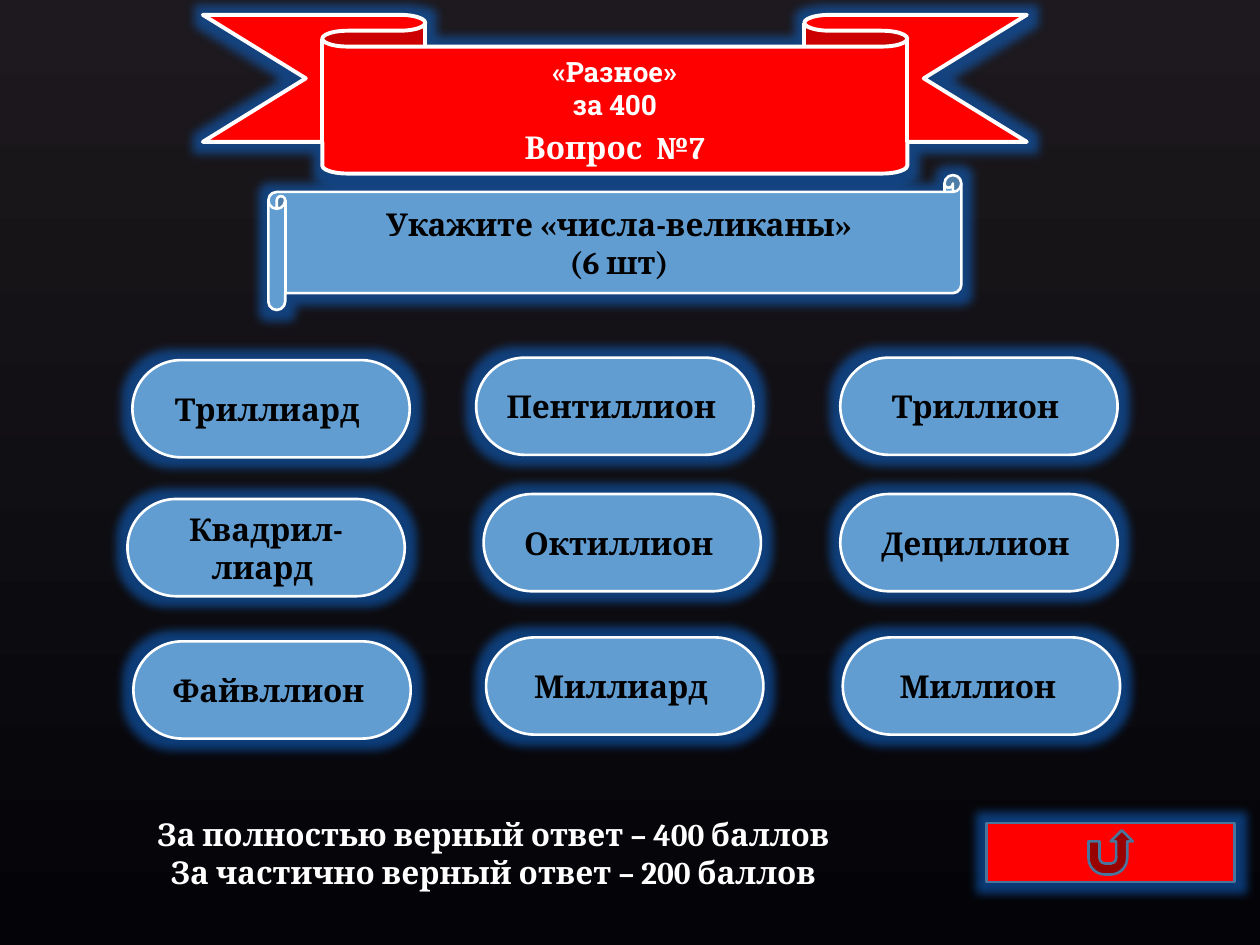
from lxml import etree
from pptx import Presentation
from pptx.dml.color import RGBColor
from pptx.enum import shapes, text
from pptx.oxml import ns
from pptx.util import Cm, Pt

RED, BLUE, WHITE, BLACK, STEEL = "FF0000", "629DD1", "FFFFFF", "000000", "49749B"
GLOW = "1060C0"

HEADER = [("«Разное»", "Roboto Slab", 16, 0),
          ("за 400", "Roboto Slab", 16, 0),
          ("Вопрос  №7", "Cambria", 18, 4)]
QUESTION = ["Укажите «числа-великаны»", "(6 шт)"]
ANSWERS = [
    ("Триллиард ", 2.67, 7.26), ("Пентиллион ", 9.6, 7.21), ("Триллион ", 16.94, 7.21),
    ("Квадрил-лиард ", 2.57, 10.06), ("Октиллион ", 9.75, 9.96), ("Дециллион ", 16.94, 9.96),
    ("Файвллион ", 2.69, 12.93), ("Миллиард ", 9.8, 12.85), ("Миллион ", 16.99, 12.85),
]
ANSWER_SIZE = (5.59, 1.96)
SCORING = ["За полностью верный ответ – 400 баллов",
           "За частично верный ответ – 200 баллов"]


def color(value):
    return RGBColor.from_string(value)


def add_line(frame, wording, first=False, font="Cambria", size=18, ink=BLACK, before=0):
    line = frame.paragraphs[0] if first else frame.add_paragraph()
    line.alignment = text.PP_ALIGN.CENTER
    line.space_before = Pt(before)
    run = line.add_run()
    run.text = wording
    run.font.name, run.font.size, run.font.bold = font, Pt(size), True
    run.font.color.rgb = color(ink)


def add_glow(shape):
    shape.shadow.inherit = False
    effects = shape.element.spPr.find(ns.qn("a:effectLst"))
    glow = etree.SubElement(effects, ns.qn("a:glow"), rad=str(Pt(11)))
    tint = etree.SubElement(glow, ns.qn("a:srgbClr"), val=GLOW)
    etree.SubElement(tint, ns.qn("a:alpha"), val="60000")


def add_panel(slide, kind, box, fill=BLUE, outline=WHITE, weight=1.5):
    panel = slide.shapes.add_shape(kind, *map(Cm, box))
    panel.fill.solid()
    panel.fill.fore_color.rgb = color(fill)
    panel.line.color.rgb = color(outline)
    panel.line.width = Pt(weight)
    add_glow(panel)
    panel.text_frame.word_wrap = True
    panel.text_frame.vertical_anchor = text.MSO_ANCHOR.MIDDLE
    return panel


def main():
    deck = Presentation()
    deck.slide_width, deck.slide_height = Cm(25.4), Cm(19.05)
    slide = deck.slides.add_slide(deck.slide_layouts[6])

    backdrop = slide.background.fill
    backdrop.gradient()
    backdrop.gradient_angle = 270
    for stop, shade in zip(backdrop.gradient_stops, ("1D191E", "040408")):
        stop.color.rgb = color(shade)

    kinds = shapes.MSO_SHAPE
    ribbon = add_panel(slide, kinds.DOWN_RIBBON, (4.09, 0.3, 16.61, 3.2), RED, weight=2.25)
    ribbon.adjustments[0], ribbon.adjustments[1] = 0.2, 0.71
    for i, (wording, font, size, before) in enumerate(HEADER):
        add_line(ribbon.text_frame, wording, i == 0, font, size, WHITE, before)

    add_panel(slide, kinds.ACTION_BUTTON_RETURN, (19.89, 16.59, 5, 1.19), RED, STEEL)

    scroll = add_panel(slide, kinds.HORIZONTAL_SCROLL, (5.41, 3.53, 13.97, 2.72))
    for i, wording in enumerate(QUESTION):
        add_line(scroll.text_frame, wording, i == 0)

    for wording, left, top in ANSWERS:
        answer = add_panel(slide, kinds.ROUNDED_RECTANGLE, (left, top, *ANSWER_SIZE))
        answer.adjustments[0] = 0.5
        add_line(answer.text_frame, wording, True)

    scoring = slide.shapes.add_textbox(*map(Cm, (2.62, 16.31, 14.66, 1.8))).text_frame
    scoring.word_wrap = True
    for i, wording in enumerate(SCORING):
        add_line(scoring, wording, i == 0, ink=WHITE)

    deck.save("out.pptx")


if __name__ == "__main__":
    main()
